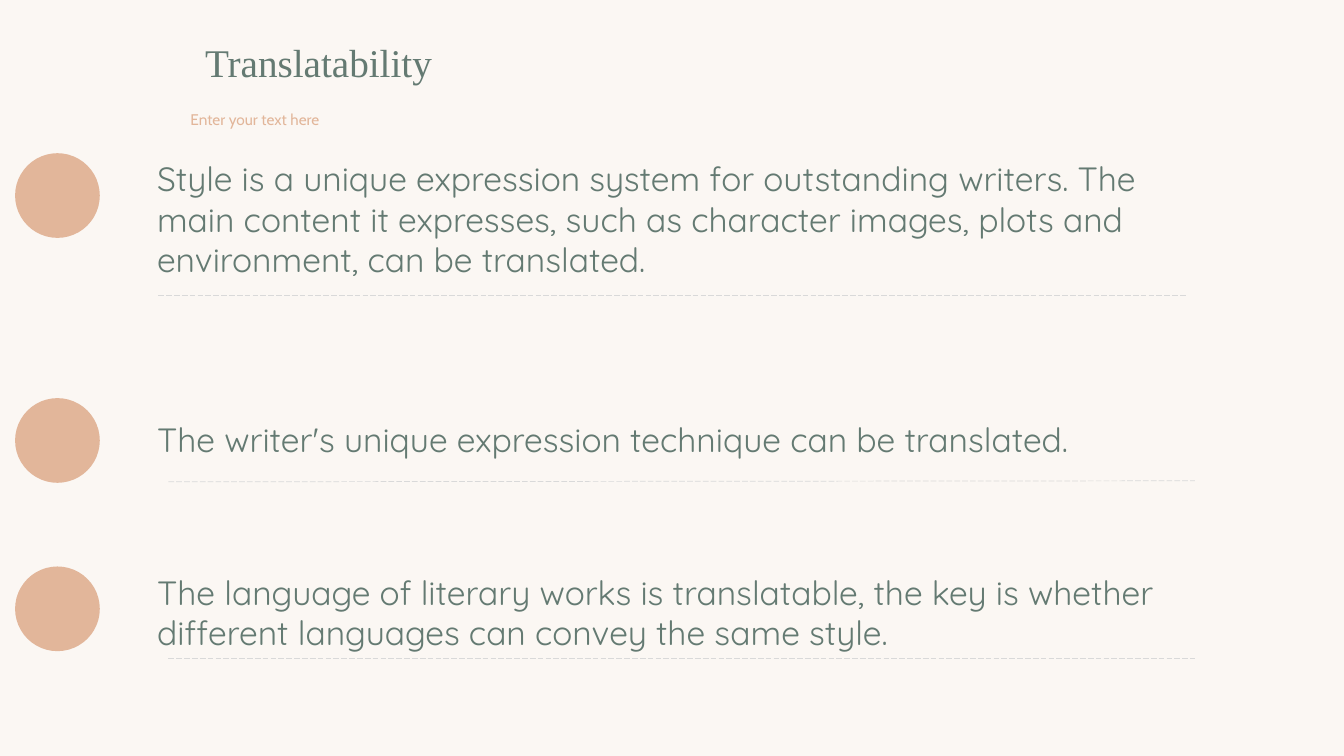
import pptx
import pptx.dml.color
import pptx.enum.dml
import pptx.enum.shapes
import pptx.enum.text
import pptx.oxml
import pptx.util
from pptx.util import Inches

ALIGN = pptx.enum.text.PP_ALIGN
BACKGROUND, GREEN, PEACH, GREY = "FBF7F3", "647A72", "E2B69A", "D9D9D9"


def colour(hex_string):
    return pptx.dml.color.RGBColor.from_string(hex_string)


class SlideBuilder:
    def __init__(self, slide):
        self.slide = slide
        slide.background.fill.solid()
        slide.background.fill.fore_color.rgb = colour(BACKGROUND)

    def set_words(self, box, words, font, size, ink, align, wrap):
        frame = box.text_frame
        frame.text = words
        frame.word_wrap = wrap
        frame.auto_size = pptx.enum.text.MSO_AUTO_SIZE.SHAPE_TO_FIT_TEXT
        frame.vertical_anchor = pptx.enum.text.MSO_ANCHOR.TOP
        paragraph = frame.paragraphs[0]
        paragraph.alignment = align
        for run in paragraph.runs:
            run.font.name = font
            run.font.size = pptx.util.Pt(size)
            run.font.color.rgb = colour(ink)

    def title(self, words, left, top, width, height):
        heading = self.slide.shapes.title
        heading.left, heading.top = Inches(left), Inches(top)
        heading.width, heading.height = Inches(width), Inches(height)
        self.set_words(heading, words, "Times New Roman", 28, GREEN, ALIGN.CENTER, False)

    def text(self, words, left, top, width, height, font="Quicksand", size=24,
             ink=GREEN, align=ALIGN.LEFT):
        box = self.slide.shapes.add_textbox(
            Inches(left), Inches(top), Inches(width), Inches(height))
        self.set_words(box, words, font, size, ink, align, True)

    def dot(self, left, top, size):
        circle = self.slide.shapes.add_shape(
            pptx.enum.shapes.MSO_SHAPE.OVAL,
            Inches(left), Inches(top), Inches(size), Inches(size))
        circle.shadow.inherit = False
        circle.fill.solid()
        circle.fill.fore_color.rgb = colour(PEACH)
        circle.line.fill.background()

    def rule(self, x1, y1, x2, y2):
        divider = self.slide.shapes.add_connector(
            pptx.enum.shapes.MSO_CONNECTOR.STRAIGHT,
            Inches(x1), Inches(y1), Inches(x2), Inches(y2))
        divider.line.color.rgb = colour(GREY)
        divider.line.width = pptx.util.Pt(0.5)
        divider.line.dash_style = pptx.enum.dml.MSO_LINE.LONG_DASH
        properties = divider.element.spPr
        properties.append(pptx.oxml.xmlchemy.OxmlElement("a:effectLst"))


def main():
    deck = pptx.Presentation()
    deck.slide_width, deck.slide_height = Inches(13.33), Inches(7.5)
    page = SlideBuilder(deck.slides.add_slide(deck.slide_layouts.get_by_name("Title Only")))

    page.title("Translatability", 1.93, 0.33, 2.46, 0.57)
    page.text("Enter your text here", 1.79, 1.04, 3.55, 0.29,
              font="Cabin", size=11, ink=PEACH, align=ALIGN.JUSTIFY)

    points = [
        ("Style is a unique expression system for outstanding writers. The main content "
         "it expresses, such as character images, plots and environment, can be translated.",
         1.52, (1.52, 10.4, 1.31), (1.57, 2.93, 11.77, 2.93)),
        ("The writer's unique expression technique can be translated.",
         3.95, (4.11, 10.6, 0.5), (1.67, 4.78, 11.85, 4.77)),
        ("The language of literary works is translatable, the key is whether different "
         "languages can convey the same style.",
         5.62, (5.62, 10.4, 0.91), (1.67, 6.53, 11.85, 6.53)),
    ]
    for statement, dot_top, statement_box, divider_ends in points:
        page.dot(0.15, dot_top, 0.84)
        page.text(statement, 1.46, *statement_box)
        page.rule(*divider_ends)

    deck.save("out.pptx")


if __name__ == "__main__":
    main()
